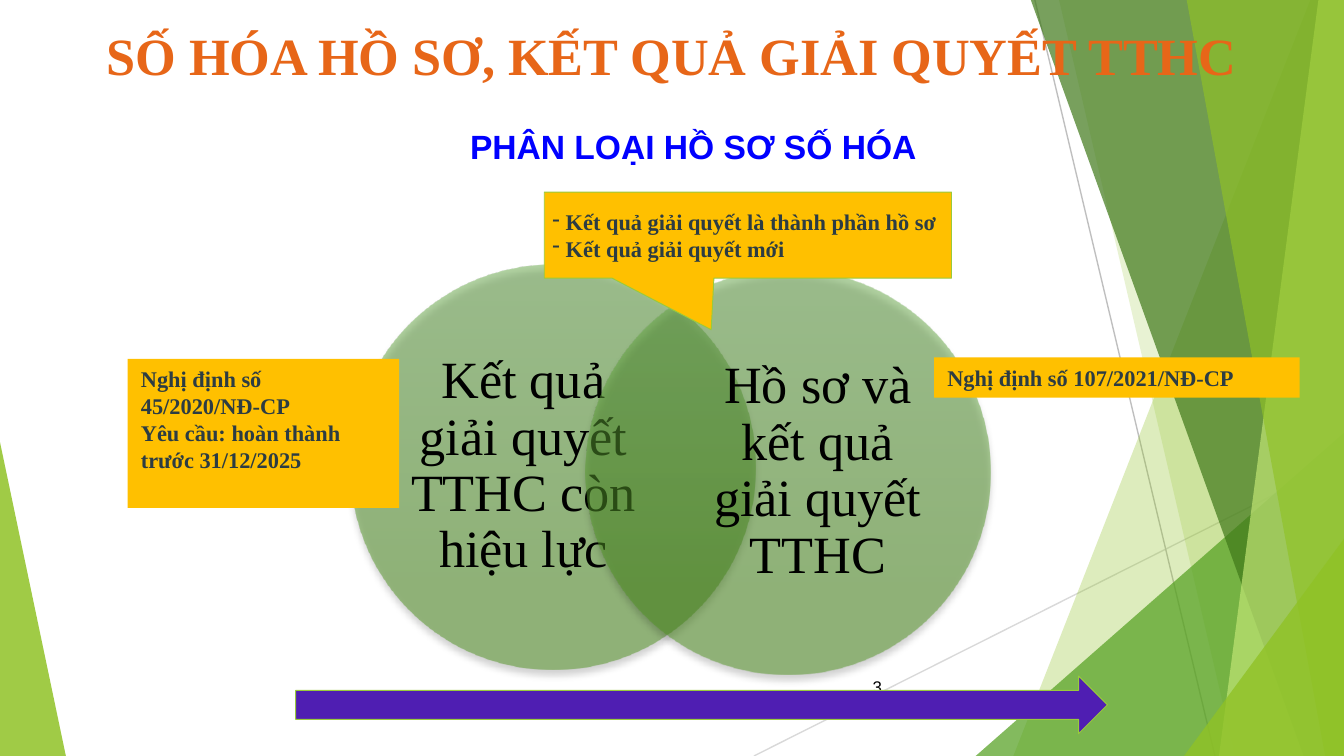
"""Build the slide on sorting records for digitisation."""
from dataclasses import dataclass
from lxml.etree import SubElement
from pptx import Presentation
from pptx.dml.color import RGBColor
from pptx.enum.shapes import MSO_CONNECTOR as Link, MSO_SHAPE as Kind
from pptx.enum.text import MSO_ANCHOR as Anchor, PP_ALIGN as Align
from pptx.oxml.ns import qn
from pptx.util import Inches, Pt

W = 10
H = W * 9 / 16
SERIF, SANS = "Times New Roman", "Arial"
GOLD, SLATE, LIME = "FFC000", "2C3C43", "99CA3C"


@dataclass
class Facet:
    color: str
    alpha: int
    points: list


@dataclass
class Ray:
    start: tuple
    end: tuple
    color: str


@dataclass
class Disc:
    left: float
    top: float
    text_left: float
    text: str


@dataclass
class Note:
    box: tuple
    lines: list


@dataclass
class Style:
    size: float
    color: str
    font: str = SERIF
    bold: bool = True
    align: Align = Align.LEFT
    anchor: Anchor = Anchor.TOP
    inset: tuple = (0.1, 0.05, 0.1, 0.05)
    pitch: float = 1


EDGE = Facet("90C226", 85, [(0, 3.29), (0.49, H), (0, H)])
RAYS = [Ray((5.61, H), (W, 3.42), "D9D9D9"), Ray((7.7, 0), (9.04, H), "BFBFBF")]
FACETS = [
    Facet("90C226", 30, [(9.75, 0), (7.54, H), (W, H), (W, 0)]),
    Facet("90C226", 20, [(7.88, 0), (9.19, H), (W, H), (W, 0)]),
    Facet("54A021", 72, [(7.26, H), (W, 3.22), (W, H)]),
    Facet("3F7819", 70, [(7.67, 0), (9.7, H), (W, H), (W, 0)]),
    Facet("C0E474", 70, [(9.81, 0), (9.07, H), (W, H), (W, 0)]),
    Facet("90C226", 65, [(8.83, 0), (9.86, H), (W, H), (W, 0)]),
    Facet("90C226", 80, [(8.81, H), (W, 4.01), (W, H)]),
]
DISCS = [
    Disc(2.61, 1.97, 3.03, "Kết quả giải quyết TTHC còn hiệu lực"),
    Disc(4.36, 2.01, 5.22, "Hồ sơ và kết quả giải quyết TTHC"),
]
NOTES = [
    Note((0.95, 2.67, 2.02, 1.11),
         ["Nghị định số 45/2020/NĐ-CP", "Yêu cầu: hoàn thành trước 31/12/2025"]),
    Note((6.95, 2.66, 2.72, 0.3), ["Nghị định số 107/2021/NĐ-CP"]),
]
NOTE = Style(12, SLATE)
DISC = Style(28, "000000", bold=False, align=Align.CENTER, anchor=Anchor.MIDDLE,
             inset=(0, 0, 0, 0), pitch=0.9)
CALL = Style(12, SLATE, align=Align.JUSTIFY, anchor=Anchor.MIDDLE, inset=(0.06, 0, 0, 0))
PAGE = Style(9, "000000", SANS, False, Align.RIGHT, Anchor.MIDDLE)
HEAD = Style(18, "0000FF", SANS, align=Align.CENTER)
TITLE = Style(28, "E76618", align=Align.CENTER)


def rgb(code: str) -> RGBColor:
    return RGBColor.from_string(code)


def fade(shape, alpha: int) -> None:
    for color in shape.element.spPr.iter(qn("a:srgbClr")):
        SubElement(color, qn("a:alpha"), val=str(alpha * 1000))


def paint(shape, fill: str, line: str = "") -> None:
    shape.shadow.inherit = False
    shape.fill.solid()
    shape.fill.fore_color.rgb = rgb(fill)
    if line:
        shape.line.color.rgb = rgb(line)
        shape.line.width = Pt(0.5)
    else:
        shape.line.fill.background()


def write(shape, lines: list, style: Style) -> None:
    frame = shape.text_frame
    frame.text = "\n".join(lines)
    frame.word_wrap = True
    frame.vertical_anchor = style.anchor
    (frame.margin_left, frame.margin_top,
     frame.margin_right, frame.margin_bottom) = map(Inches, style.inset)
    for para in frame.paragraphs:
        para.alignment = style.align
        para.line_spacing = style.pitch
        for run in para.runs:
            font = run.font
            font.name, font.size, font.bold = style.font, Pt(style.size), style.bold
            font.color.rgb = rgb(style.color)


def add_text(shapes, box: tuple, text: str, style: Style) -> None:
    write(shapes.add_textbox(*map(Inches, box)), [text], style)


def add_block(shapes, kind: Kind, box: tuple, fill: str, line: str = ""):
    shape = shapes.add_shape(kind, *map(Inches, box))
    paint(shape, fill, line)
    return shape


def add_facet(shapes, facet: Facet) -> None:
    first, *rest = [(Inches(x), Inches(y)) for x, y in facet.points]
    pen = shapes.build_freeform(*first)
    pen.add_line_segments(rest, close=True)
    shape = pen.convert_to_shape()
    paint(shape, facet.color)
    fade(shape, facet.alpha)


def add_ray(shapes, ray: Ray) -> None:
    line = shapes.add_connector(Link.STRAIGHT, *map(Inches, ray.start + ray.end))
    line.line.color.rgb = rgb(ray.color)
    line.line.width = Pt(0.75)
    SubElement(line.element.spPr, qn("a:effectLst"))


def add_disc(shapes, disc: Disc) -> None:
    shape = add_block(shapes, Kind.OVAL, (disc.left, disc.top, 3.01, 3.01), LIME)
    shape.fill.gradient()
    shape.fill.gradient_angle = 270
    for stop, place, code in zip(shape.fill.gradient_stops, (0, 0.78), ("63A545", "4D921E")):
        stop.position = place
        stop.color.rgb = rgb(code)
    fade(shape, 50)
    effect = shape.element.spPr.find(qn("a:effectLst"))
    shade = SubElement(effect, qn("a:outerShdw"), blurRad=str(Pt(4)), dist=str(Pt(3)),
                       dir="5400000", rotWithShape="0")
    black = SubElement(shade, qn("a:srgbClr"), val="000000")
    SubElement(black, qn("a:alpha"), val="35000")
    add_text(shapes, (disc.text_left, disc.top + 0.35, 1.73, 2.3), disc.text, DISC)


def add_call(shapes) -> None:
    call = add_block(shapes, Kind.RECTANGULAR_CALLOUT, (4.05, 1.43, 3.03, 0.64), GOLD, LIME)
    call.adjustments[0], call.adjustments[1] = -0.09, 1.1
    write(call, ["Kết quả giải quyết là thành phần hồ sơ", "Kết quả giải quyết mới"], CALL)
    for para in call.text_frame.paragraphs:
        props = para._p.get_or_add_pPr()
        props.set("marL", str(Inches(0.1)))
        props.set("indent", str(Inches(-0.1)))
        SubElement(props, qn("a:buFontTx"))
        SubElement(props, qn("a:buChar"), char="-")


def main() -> None:
    deck = Presentation()
    deck.slide_width, deck.slide_height = Inches(W), Inches(H)
    shapes = deck.slides.add_slide(deck.slide_layouts[5]).shapes
    title = shapes.title
    add_facet(shapes, EDGE)
    for ray in RAYS:
        add_ray(shapes, ray)
    for facet in FACETS:
        add_facet(shapes, facet)
    add_text(shapes, (5.91, 4.96, 0.75, 0.3), "3", PAGE)
    for disc in DISCS:
        add_disc(shapes, disc)
    for note in NOTES:
        write(add_block(shapes, Kind.RECTANGLE, note.box, GOLD), note.lines, NOTE)
    add_text(shapes, (2.51, 0.89, 5.3, 0.4), "PHÂN LOẠI HỒ SƠ SỐ HÓA", HEAD)
    add_call(shapes)
    add_block(shapes, Kind.RIGHT_ARROW, (2.2, 5.03, 6.04, 0.43), "4F1EB2", LIME)
    title.left, title.top, title.width, title.height = map(Inches, (0.62, 0.12, 8.75, 0.7))
    write(title, ["SỐ HÓA HỒ SƠ, KẾT QUẢ GIẢI QUYẾT TTHC"], TITLE)
    shapes.element.append(title.element)
    deck.save("out.pptx")


if __name__ == "__main__":
    main()
